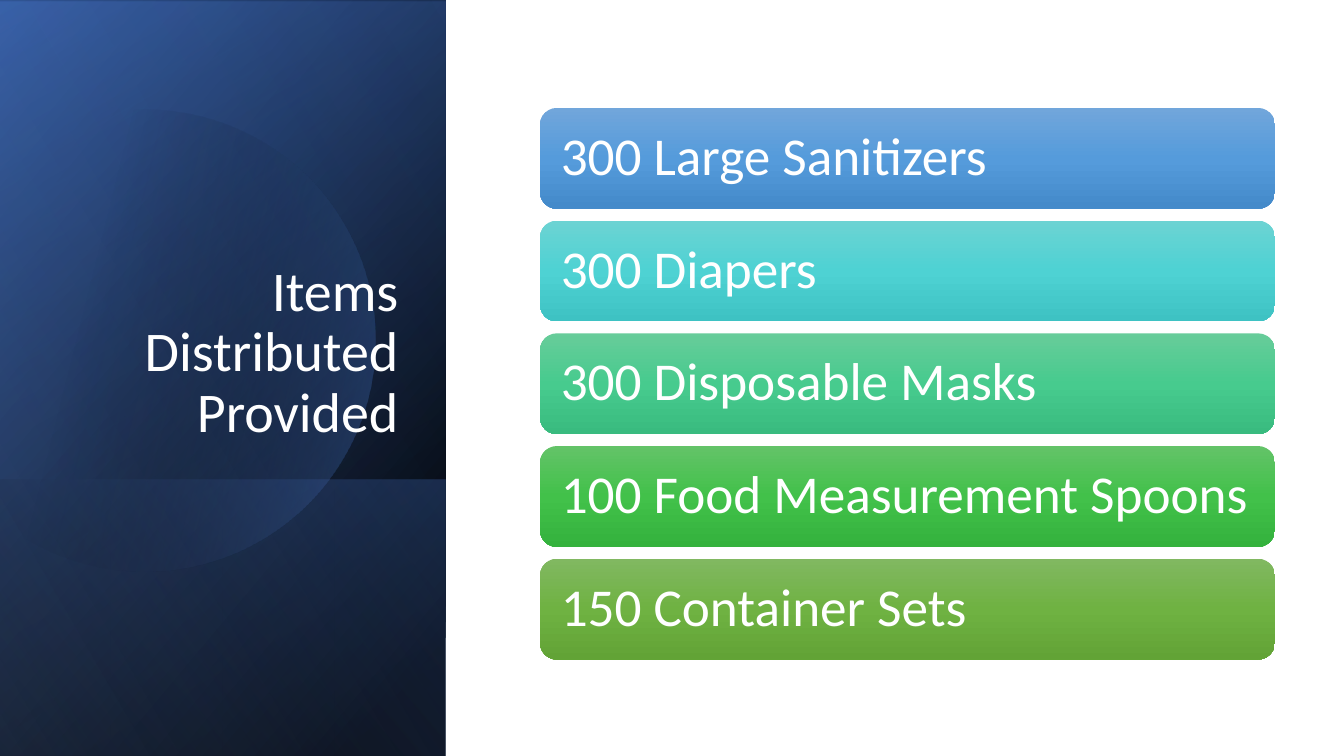
"""Builds a slide listing the items handed out beside a dark blue title panel."""
from dataclasses import dataclass
from math import cos, radians, sin

from pptx import Presentation
from pptx.dml.color import RGBColor
from pptx.enum.shapes import MSO_SHAPE
from pptx.enum.text import MSO_ANCHOR, PP_ALIGN
from pptx.oxml import parse_xml
from pptx.oxml.ns import nsdecls, qn
from pptx.shapes.autoshape import Shape
from pptx.slide import Slide
from pptx.text.text import TextFrame
from pptx.util import Cm, Pt


@dataclass(frozen=True)
class Stop:
    spot: int
    color: str
    alpha: int = 100


@dataclass(frozen=True)
class Blend:
    angle: int
    stops: tuple[Stop, ...]


@dataclass(frozen=True)
class Panel:
    left: float
    top: float
    width: float
    height: float
    blend: Blend


@dataclass(frozen=True)
class Item:
    text: str
    colors: tuple[str, str, str]


@dataclass(frozen=True)
class Theme:
    font: str = "Calibri"
    white: str = "FFFFFF"
    black: str = "000000"
    navy: str = "2F5597"
    blue: str = "4472C4"
    pale: str = "8FAADC"
    title: int = 40
    body: int = 38
    sky: tuple[str, str, str] = ("71A6DB", "559BDB", "448ACA")
    teal: tuple[str, str, str] = ("6CD3D3", "4ED2D3", "3EC2C3")
    mint: tuple[str, str, str] = ("67CC9A", "47CB8E", "39BB7F")
    green: tuple[str, str, str] = ("63C368", "42C14A", "34B23D")
    olive: tuple[str, str, str] = ("81B861", "6FB242", "62A336")


THEME = Theme()
PANELS = (
    Panel(-3.91, 3.91, 19.05, 11.23,
          Blend(50, (Stop(8, THEME.black), Stop(100, THEME.navy)))),
    Panel(-3.91, 3.94, 19.05, 11.23,
          Blend(30, (Stop(0, THEME.black, 0), Stop(99, THEME.blue, 46)))),
    Panel(2.13, 9.96, 6.96, 11.23,
          Blend(130, (Stop(2, THEME.blue, 29), Stop(100, THEME.black, 30)))),
)
GLOW = Blend(14, (Stop(29, THEME.black, 0), Stop(100, THEME.blue, 43)))
SHEEN = Panel(-3.91, 3.91, 19.05, 11.23,
              Blend(120, (Stop(0, THEME.black, 0), Stop(99, THEME.pale, 11))))
ITEMS = (
    Item("300 Large Sanitizers", THEME.sky),
    Item("300 Diapers", THEME.teal),
    Item("300 Disposable Masks", THEME.mint),
    Item("100 Food Measurement Spoons", THEME.green),
    Item("150 Container Sets", THEME.olive),
)


def paint(shape: Shape, blend: Blend) -> None:
    shape.shadow.inherit = False
    shape.line.fill.background()
    shape.fill.gradient()
    stops = "".join(
        f'<a:gs pos="{stop.spot * 1000}"><a:srgbClr val="{stop.color}">'
        f'<a:alpha val="{stop.alpha * 1000}"/></a:srgbClr></a:gs>'
        for stop in blend.stops)
    fill = parse_xml(
        f'<a:gradFill {nsdecls("a")} rotWithShape="1"><a:gsLst>{stops}</a:gsLst>'
        f'<a:lin ang="{blend.angle * 60000}" scaled="0"/></a:gradFill>')
    props = shape._element.spPr
    props.replace(props.find(qn("a:gradFill")), fill)


def write(frame: TextFrame, text: str, size: int, align: PP_ALIGN) -> None:
    frame.word_wrap = True
    para = frame.paragraphs[0]
    para.alignment = align
    para.line_spacing = 0.9
    run = para.add_run()
    run.text = text
    run.font.name = THEME.font
    run.font.size = Pt(size)
    run.font.color.rgb = RGBColor.from_string(THEME.white)


def draw_panel(slide: Slide, panel: Panel) -> None:
    shape = slide.shapes.add_shape(
        MSO_SHAPE.RECTANGLE, Cm(panel.left), Cm(panel.top),
        Cm(panel.width), Cm(panel.height))
    shape.rotation = 90
    shape._element.spPr.find(qn("a:xfrm")).set("flipH", "1")
    paint(shape, panel.blend)


def draw_disc(slide: Slide) -> None:
    mid_x, mid_y, radius, sweep, steps = 3.63, 8.59, 5.82, 133.5, 120
    turns = [radians(sweep * (2 * step / steps - 1)) for step in range(steps + 1)]
    points = [(Cm(mid_x + radius * cos(turn)), Cm(mid_y + radius * sin(turn)))
              for turn in turns]
    path = slide.shapes.build_freeform(*points[0])
    path.add_line_segments(points[1:], close=True)
    paint(path.convert_to_shape(), GLOW)


def draw_title(slide: Slide) -> None:
    box = slide.shapes.add_textbox(Cm(1.63), Cm(4.67), Cm(8.66), Cm(6.65))
    box.text_frame.vertical_anchor = MSO_ANCHOR.BOTTOM
    write(box.text_frame, "Items Distributed Provided", THEME.title, PP_ALIGN.RIGHT)


def draw_item(slide: Slide, item: Item, row: int) -> None:
    bar = slide.shapes.add_shape(
        MSO_SHAPE.ROUNDED_RECTANGLE, Cm(13.61), Cm(2.72 + 2.84 * row),
        Cm(18.52), Cm(2.54))
    paint(bar, Blend(90, tuple(
        Stop(50 * step, color) for step, color in enumerate(item.colors))))
    frame = bar.text_frame
    frame.margin_left = frame.margin_right = Cm(0.4)
    frame.margin_top = frame.margin_bottom = Cm(0.4)
    frame.vertical_anchor = MSO_ANCHOR.MIDDLE
    write(frame, item.text, THEME.body, PP_ALIGN.LEFT)


def main() -> None:
    deck = Presentation()
    deck.slide_width, deck.slide_height = Cm(33.87), Cm(19.05)
    slide = deck.slides.add_slide(deck.slide_layouts[6])
    for panel in PANELS:
        draw_panel(slide, panel)
    draw_disc(slide)
    draw_panel(slide, SHEEN)
    draw_title(slide)
    for row, item in enumerate(ITEMS):
        draw_item(slide, item, row)
    deck.save("out.pptx")


if __name__ == "__main__":
    main()
